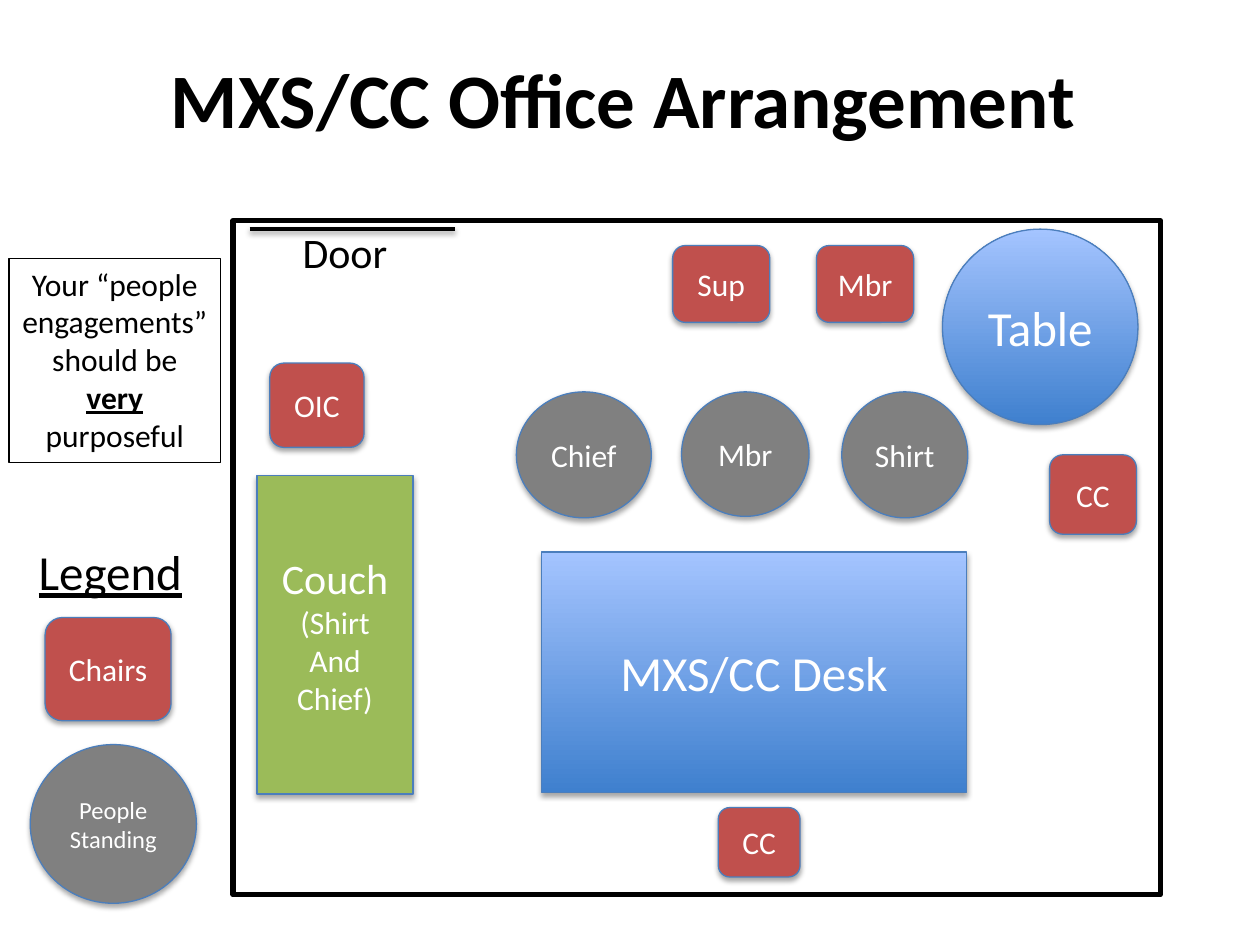
from dataclasses import dataclass

from lxml.etree import SubElement
from pptx import Presentation
from pptx.dml.color import RGBColor
from pptx.enum.shapes import MSO_CONNECTOR, MSO_SHAPE
from pptx.enum.text import MSO_ANCHOR, PP_ALIGN
from pptx.oxml.ns import qn
from pptx.util import Cm, Pt

FONT = "Calibri"
COLORS = {
    "black": "000000", "white": "FFFFFF", "outline": "4B7EBC",
    "chair": "C0504D", "person": "808080", "couch": "9BBB59",
    "wood_dark": "3F80CE", "wood_light": "A4C4FF",
}
RECT, ROUND, OVAL = MSO_SHAPE.RECTANGLE, MSO_SHAPE.ROUNDED_RECTANGLE, MSO_SHAPE.OVAL


@dataclass
class Kind:
    shape: MSO_SHAPE
    fill: str  # a colour name, or "wood" for the gradient
    size: int = 18


@dataclass
class Item:
    """A piece of the office; place is left, top, width, height in cm."""
    kind: Kind
    place: tuple[float, float, float, float]
    lines: tuple[str, ...]


CHAIR = Kind(ROUND, "chair")
PERSON = Kind(OVAL, "person")
COUCH = Kind(RECT, "couch")
DESK = Kind(RECT, "wood", 28)
TABLE = Kind(OVAL, "wood", 28)
PERSON_KEY = Kind(OVAL, "person", 14)

ITEMS = [
    Item(DESK, (10.92, 11.13, 8.56, 4.85), ("MXS/CC Desk",)),
    Item(CHAIR, (14.48, 16.28, 1.65, 1.4), ("CC",)),
    Item(TABLE, (19, 4.62, 3.94, 3.94), ("Table",)),
    Item(CHAIR, (13.56, 4.95, 1.96, 1.55), ("Sup",)),
    Item(CHAIR, (16.46, 4.95, 1.96, 1.55), ("Mbr",)),
    Item(CHAIR, (21.16, 9.17, 1.75, 1.6), ("CC",)),
    Item(COUCH, (5.18, 9.58, 3.15, 6.43), ("Couch", "(Shirt", "And", "Chief)")),
    Item(CHAIR, (5.44, 7.32, 1.9, 1.7), ("OIC",)),
    Item(PERSON, (10.41, 7.9, 2.72, 2.54), ("Chief",)),
    Item(PERSON, (13.74, 7.9, 2.57, 2.51), ("Mbr",)),
    Item(PERSON, (16.97, 7.9, 2.54, 2.54), ("Shirt",)),
    Item(CHAIR, (0.91, 12.45, 2.54, 2.08), ("Chairs",)),
    Item(PERSON_KEY, (0.61, 15.01, 3.35, 3.2), ("People Standing",)),
]


def rgb(name: str) -> RGBColor:
    return RGBColor.from_string(COLORS[name])


def cm(values) -> list[Cm]:
    return [Cm(v) for v in values]


def add_run(p, text: str, size: int, color: str = "black",
            bold: bool = False, underline: bool = False) -> None:
    r = p.add_run()
    r.text = text
    r.font.name, r.font.size = FONT, Pt(size)
    r.font.bold, r.font.underline = bold, underline
    r.font.color.rgb = rgb(color)


def set_line(shape, color: str, width: float) -> None:
    shape.line.color.rgb = rgb(color)
    shape.line.width = Pt(width)


def add_shadow(shape, dist: float, opacity: int) -> None:
    effects = SubElement(shape._element.spPr, qn("a:effectLst"))
    shadow = SubElement(effects, qn("a:outerShdw"), blurRad=str(Pt(3.1)),
                        dist=str(Pt(dist)), dir="5400000", rotWithShape="0")
    color = SubElement(shadow, qn("a:srgbClr"), val=COLORS["black"])
    SubElement(color, qn("a:alpha"), val=str(opacity * 1000))


def add_item(s, item: Item) -> None:
    sp = s.shapes.add_shape(item.kind.shape, *cm(item.place))
    if item.kind.fill == "wood":
        sp.fill.gradient()
        sp.fill.gradient_angle = 90
        for stop, name in zip(sp.fill.gradient_stops, ("wood_dark", "wood_light")):
            stop.color.rgb = rgb(name)
    else:
        sp.fill.solid()
        sp.fill.fore_color.rgb = rgb(item.kind.fill)
    set_line(sp, "outline", 0.75)
    add_shadow(sp, 1.8, 35)
    tf = sp.text_frame
    tf.word_wrap = True
    tf.vertical_anchor = MSO_ANCHOR.MIDDLE
    for i, line in enumerate(item.lines):
        p = tf.add_paragraph() if i else tf.paragraphs[0]
        p.alignment = PP_ALIGN.CENTER
        heading = i == 0 and len(item.lines) > 1
        add_run(p, line, 24 if heading else item.kind.size, "white")


def add_title(s) -> None:
    title = s.shapes.title
    title.left, title.top, title.width, title.height = cm((1.14, 0.38, 22.86, 3.18))
    title.text_frame.vertical_anchor = MSO_ANCHOR.MIDDLE
    p = title.text_frame.paragraphs[0]
    p.alignment = PP_ALIGN.CENTER
    add_run(p, "MXS/CC Office Arrangement", 44, bold=True)


def add_room(s) -> None:
    """Draw the walls, labelled at the door."""
    sp = s.shapes.add_shape(RECT, *cm((4.7, 4.45, 18.69, 13.59)))
    sp.shadow.inherit = False
    sp.fill.solid()
    sp.fill.fore_color.rgb = rgb("white")
    set_line(sp, "black", 3)
    tf = sp.text_frame
    tf.word_wrap = True
    tf.vertical_anchor = MSO_ANCHOR.TOP
    tf.margin_left = Cm(1.4)
    p = tf.paragraphs[0]
    p.alignment = PP_ALIGN.LEFT
    add_run(p, "Door", 24)


def add_door(s) -> None:
    door = s.shapes.add_connector(MSO_CONNECTOR.STRAIGHT, *cm((5.03, 4.62, 9.17, 4.62)))
    set_line(door, "black", 2)
    add_shadow(door, 1.6, 38)


def add_legend_heading(s) -> None:
    tf = s.shapes.add_textbox(*cm((0.53, 10.8, 3.45, 1.45))).text_frame
    tf.word_wrap = False
    add_run(tf.paragraphs[0], "Legend", 28, underline=True)


def add_note(s) -> None:
    box = s.shapes.add_textbox(*cm((0.18, 5.21, 4.27, 4.11)))
    set_line(box, "black", 0.75)
    box.text_frame.word_wrap = True
    p = box.text_frame.paragraphs[0]
    p.alignment = PP_ALIGN.CENTER
    add_run(p, "Your “people engagements” should be ", 18)
    add_run(p, "very", 18, bold=True, underline=True)
    add_run(p, " purposeful", 18)


def main() -> None:
    prs = Presentation()
    prs.slide_width, prs.slide_height = Cm(25.4), Cm(19.05)
    s = prs.slides.add_slide(prs.slide_layouts[5])
    add_title(s)
    add_room(s)
    add_door(s)
    for item in ITEMS:
        add_item(s, item)
    add_legend_heading(s)
    add_note(s)
    prs.save("out.pptx")


if __name__ == "__main__":
    main()
